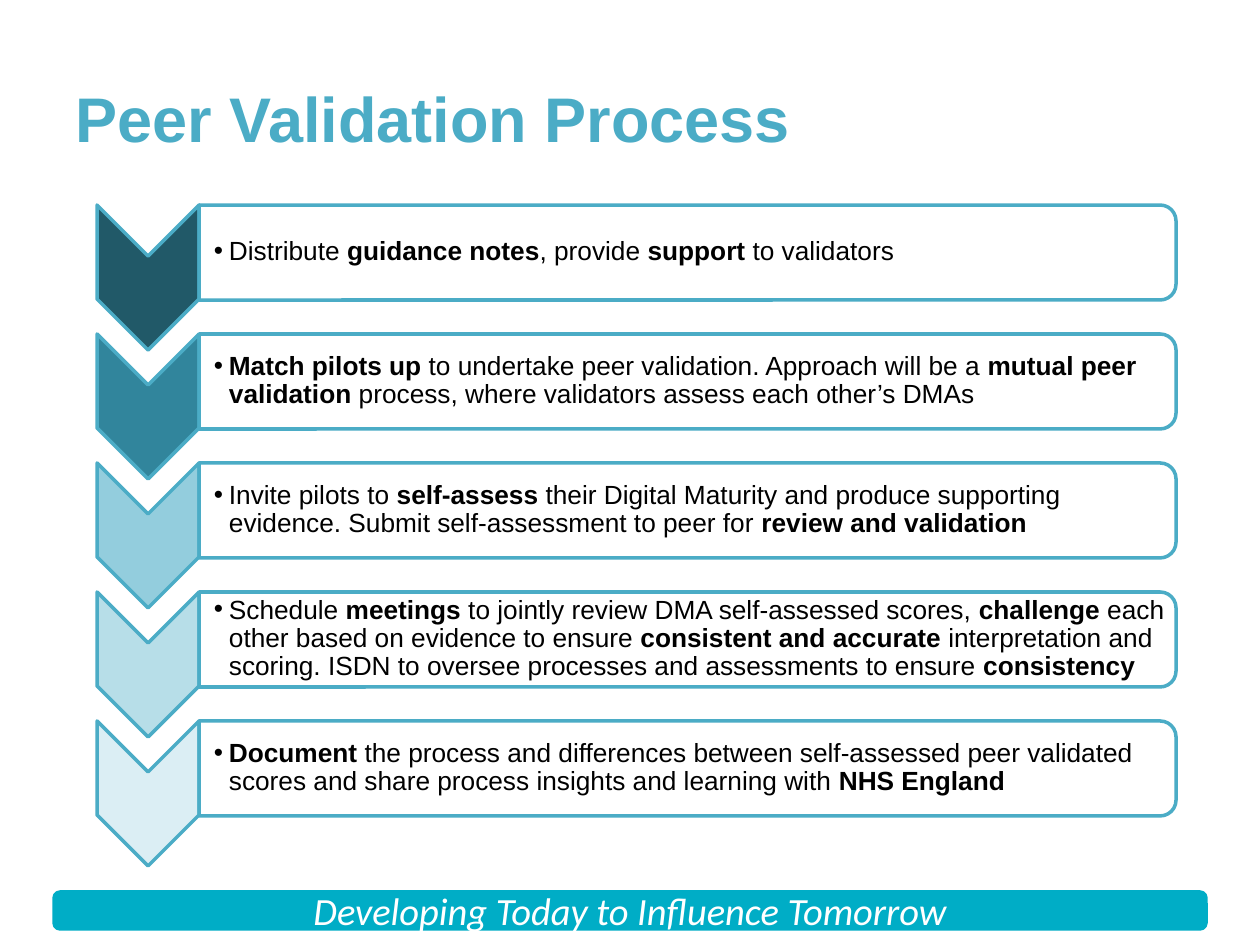
from lxml.etree import SubElement
from pptx import Presentation
from pptx.dml.color import RGBColor
from pptx.enum.shapes import MSO_SHAPE as Shape
from pptx.enum.text import MSO_ANCHOR as Anchor, PP_ALIGN as Align
from pptx.oxml.ns import qn
from pptx.util import Pt

EMU_PER_PX = 914400 / 126
TEAL = "4BACC6"
FOOTER_TEAL = "00ADC6"
# Chevron colour and wording of each step; bold passages stand between asterisks.
STEPS = [
    ("215968", "Distribute *guidance notes*, provide *support* to validators"),
    ("31859C", "*Match pilots up* to undertake peer validation. Approach will be a "
               "*mutual peer validation* process, where validators assess each other’s DMAs"),
    ("93CDDD", "Invite pilots to *self-assess *their Digital Maturity and produce supporting "
               "evidence. Submit self-assessment to peer for *review and validation*"),
    ("B7DEE8", "Schedule *meetings *to jointly review DMA self-assessed scores, *challenge *each "
               "other based on evidence to ensure *consistent and accurate *interpretation and "
               "scoring. ISDN to oversee processes and assessments to ensure *consistency*"),
    ("DBEEF4", "*Document *the process and differences between self-assessed peer validated "
               "scores and share process insights and learning with *NHS England*"),
]


def px(length):
    return round(length * EMU_PER_PX)


def color(hex_code):
    return RGBColor.from_string(hex_code)


def add_panel(slide, preset, left, top, width, height, fill, line):
    panel = slide.shapes.add_shape(preset, px(left), px(top), px(width), px(height))
    panel.shadow.inherit = False
    panel.fill.solid()
    panel.fill.fore_color.rgb = color(fill)
    panel.line.color.rgb = color(line)
    panel.line.width = Pt(2)
    return panel


def add_turned_panel(slide, preset, left, top, width, height, fill):
    """Turn a preset a quarter clockwise so that it covers the given box."""
    shift = (width - height) / 2
    panel = add_panel(slide, preset, left + shift, top - shift, height, width, fill, TEAL)
    panel.rotation = 90
    return panel


def prepare_text(shape, side_insets, end_insets):
    frame = shape.text_frame
    frame.word_wrap = True
    frame.vertical_anchor = Anchor.MIDDLE
    frame.margin_left, frame.margin_right = map(px, side_insets)
    frame.margin_top = frame.margin_bottom = px(end_insets)
    return frame.paragraphs[0]


def add_run(paragraph, text, size, fill, font="Arial", bold=False, italic=False):
    run = paragraph.add_run()
    run.text = text
    run.font.name = font
    run.font.size = Pt(size)
    run.font.bold = bold
    run.font.italic = italic
    run.font.color.rgb = color(fill)


def add_bullet(paragraph, indent):
    properties = paragraph._p.get_or_add_pPr()
    properties.set("marL", str(px(indent)))
    properties.set("indent", str(-px(indent)))
    SubElement(properties, qn("a:buFont"), typeface="Arial")
    SubElement(properties, qn("a:buChar"), char="•")


def add_footer(slide, left, top, width, height):
    banner = add_panel(slide, Shape.ROUNDED_RECTANGLE, left, top, width, height,
                       FOOTER_TEAL, FOOTER_TEAL)
    motto = prepare_text(banner, (14, 14), 8)
    motto.alignment = Align.CENTER
    add_run(motto, "Developing Today to Influence Tomorrow", 22, "FFFFFF", "Calibri", italic=True)


def add_title(slide, left, top, width, height):
    title = slide.shapes.add_textbox(px(left), px(top), px(width), px(height))
    add_run(prepare_text(title, (13, 13), 6), "Peer Validation Process", 36, TEAL, bold=True)


def add_step(slide, left, top, width, height, fill, wording):
    chevron_width, chevron_height = 102, 145
    add_turned_panel(slide, Shape.CHEVRON, left, top, chevron_width, chevron_height, fill)

    card_left, card_width = left + chevron_width, width - chevron_width
    card = add_turned_panel(slide, Shape.ROUND_2_SAME_RECTANGLE,
                            card_left, top, card_width, height, "FFFFFF")
    card_fill = card._element.spPr.find(qn("a:solidFill"))
    SubElement(card_fill[0], qn("a:alpha"), val="90000")

    label = slide.shapes.add_textbox(px(card_left), px(top + 4), px(card_width - 5), px(height - 9))
    step_text = prepare_text(label, (15, 1), 1)
    step_text.line_spacing = 0.9
    add_bullet(step_text, 15)
    for index, part in enumerate(wording.split("*")):
        if part:
            add_run(step_text, part, 15, "000000", bold=index % 2 == 1)


def add_process(slide, left, top, width, row_height, pitch):
    for row, (fill, wording) in enumerate(STEPS):
        add_step(slide, left, top + row * pitch, width, row_height, fill, wording)


def main():
    deck = Presentation()
    deck.slide_width, deck.slide_height = px(1260), px(945)
    slide = deck.slides.add_slide(deck.slide_layouts[6])
    add_footer(slide, 54, 892, 1152, 37)
    add_title(slide, 63, 38, 1134, 158)
    add_process(slide, 97, 205, 1079, 95, 129)
    deck.save("out.pptx")


if __name__ == "__main__":
    main()
